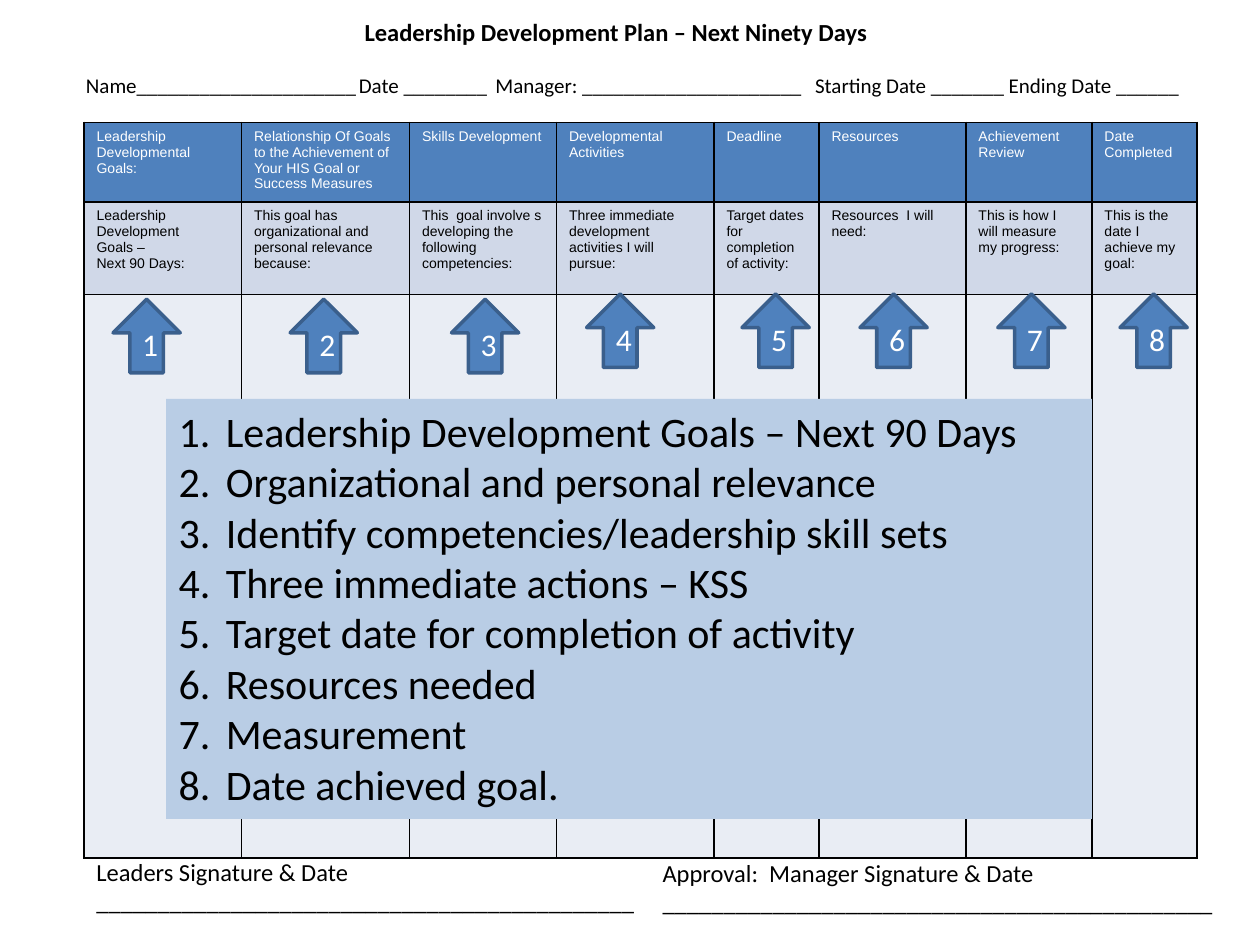
"""Build the ninety-day leadership development plan slide."""
from lxml import etree
from pptx import Presentation
from pptx.dml.color import RGBColor
from pptx.enum.shapes import MSO_SHAPE
from pptx.enum.text import MSO_ANCHOR, MSO_AUTO_SIZE, PP_ALIGN
from pptx.oxml.ns import qn
from pptx.util import Pt

RECT, UP_ARROW = MSO_SHAPE.RECTANGLE, MSO_SHAPE.UP_ARROW
TOP, MIDDLE = MSO_ANCHOR.TOP, MSO_ANCHOR.MIDDLE
CENTER, LEFT = PP_ALIGN.CENTER, PP_ALIGN.LEFT
NO_FIT, GROW = MSO_AUTO_SIZE.NONE, MSO_AUTO_SIZE.SHAPE_TO_FIT_TEXT

BLACK = RGBColor(0x00, 0x00, 0x00)
WHITE = RGBColor(0xFF, 0xFF, 0xFF)
BLUE = RGBColor(0x4F, 0x81, 0xBD)
DARK_BLUE = RGBColor(0x3A, 0x5F, 0x8C)
PANEL_BLUE = RGBColor(0xB9, 0xCD, 0xE5)
BAND_DARK = RGBColor(0xD0, 0xD8, 0xE8)
BAND_LIGHT = RGBColor(0xE9, 0xED, 0xF4)

COLUMN_WIDTHS = [90, 96, 84, 90, 60, 84, 72, 60]
ROW_HEIGHTS = [45.4, 53, 322]
HEADINGS = [
    "Leadership Developmental\nGoals:",
    "Relationship Of Goals to the Achievement of Your HIS Goal or Success Measures",
    "Skills Development",
    "Developmental Activities",
    "Deadline",
    "Resources",
    "Achievement Review",
    "Date Completed",
]
PROMPTS = [
    "Leadership Development\nGoals –\nNext 90 Days:",
    "This goal has organizational and personal relevance because:",
    "This  goal involve s developing the following competencies:",
    "Three immediate development activities I will pursue:",
    "Target dates\nfor completion of activity:",
    "Resources  I will need:",
    "This is how I will measure my progress:",
    "This is the date I achieve my goal:",
]
ROWS = [
    (HEADINGS, BLUE, WHITE),
    (PROMPTS, BAND_DARK, BLACK),
    ([""] * len(HEADINGS), BAND_LIGHT, BLACK),
]
FIELDS = [
    ("Name_____________________", 42, 171),
    ("Date ________", 198, 89),
    ("Manager: _____________________", 276, 191),
    (" Starting Date _______ Ending Date ______", 456, 227),
]
SIGNATURES = [
    ("Leaders Signature & Date\n" + "_" * 44, 48, 486),
    ("Approval:  Manager Signature & Date\n" + "_" * 45, 371.5, 486.7),
]
STEPS = [
    "Leadership Development Goals – Next 90 Days",
    "Organizational and personal relevance",
    "Identify competencies/leadership skill sets",
    "Three immediate actions – KSS",
    "Target date for completion of activity",
    "Resources needed",
    "Measurement",
    "Date achieved goal.",
]
ARROWS = [(64.6, 171), (165.8, 171), (258, 171), (335.2, 168),
          (424, 168), (491.4, 168), (570.2, 168), (640, 168)]


def write(tf, text, size, color=BLACK, name="Calibri", align=LEFT, bold=False):
    """Fill a text frame with one formatted paragraph per line."""
    tf.text = text
    for p in tf.paragraphs:
        p.alignment = align
        p.font.size = Pt(size)
        p.font.name = name
        p.font.bold = bold
        p.font.color.rgb = color


def add_title(slide, text):
    """Place and format the title placeholder."""
    title = slide.shapes.title
    title.left, title.top, title.width, title.height = Pt(200), Pt(6), Pt(304), Pt(24.2)
    tf = title.text_frame
    tf.word_wrap = False
    tf.auto_size = NO_FIT
    tf.vertical_anchor = TOP
    write(tf, text, 14, bold=True, align=CENTER)


def add_text(slide, text, left, top, width, height, size, wrap):
    """Add a plain text box."""
    tf = slide.shapes.add_textbox(Pt(left), Pt(top), Pt(width), Pt(height)).text_frame
    tf.word_wrap = wrap
    tf.auto_size = GROW
    write(tf, text, size)


def add_borders(cell):
    """Draw a thin black line on every side of a cell."""
    tc_pr = cell._tc.get_or_add_tcPr()
    for side in ("a:lnL", "a:lnR", "a:lnT", "a:lnB"):
        ln = etree.SubElement(tc_pr, qn(side), w=str(Pt(1)))
        fill = etree.SubElement(ln, qn("a:solidFill"))
        etree.SubElement(fill, qn("a:srgbClr"), val=str(BLACK))


def add_plan_table(slide):
    """Add the planning grid."""
    table = slide.shapes.add_table(
        len(ROWS), len(COLUMN_WIDTHS), Pt(48), Pt(70),
        Pt(sum(COLUMN_WIDTHS)), Pt(sum(ROW_HEIGHTS))).table
    for column, width in zip(table.columns, COLUMN_WIDTHS):
        column.width = Pt(width)
    for row, height, (texts, fill, color) in zip(table.rows, ROW_HEIGHTS, ROWS):
        row.height = Pt(height)
        for cell, text in zip(row.cells, texts):
            add_borders(cell)
            cell.fill.solid()
            cell.fill.fore_color.rgb = fill
            write(cell.text_frame, text, 8, color, "Arial")


def add_shape(slide, kind, left, top, width, height, fill):
    """Add a filled preset shape without shadow or outline."""
    sp = slide.shapes.add_shape(kind, Pt(left), Pt(top), Pt(width), Pt(height))
    sp.shadow.inherit = False
    sp.fill.solid()
    sp.fill.fore_color.rgb = fill
    sp.line.fill.background()
    return sp


def add_steps_panel(slide):
    """Add the panel with the numbered steps."""
    tf = add_shape(slide, RECT, 95, 228, 529, 240, PANEL_BLUE).text_frame
    tf.word_wrap = True
    tf.auto_size = GROW
    tf.vertical_anchor = TOP
    tf.text = "\n".join(STEPS)
    for p in tf.paragraphs:
        p_pr = p._p.get_or_add_pPr()
        p_pr.set("marL", str(Pt(27)))
        p_pr.set("indent", str(-Pt(27)))
        etree.SubElement(p_pr, qn("a:buFont"), typeface="+mj-lt")
        etree.SubElement(p_pr, qn("a:buAutoNum"), type="arabicPeriod")
        p.alignment = LEFT
        p.font.size = Pt(24)
        p.font.name = "Calibri"
        p.font.color.rgb = BLACK


def add_arrow(slide, number, left, top):
    """Add a numbered arrow pointing up at its column."""
    sp = add_shape(slide, UP_ARROW, left, top, 38.4, 42, BLUE)
    sp.line.color.rgb = DARK_BLUE
    sp.line.width = Pt(2)
    sp.text_frame.vertical_anchor = MIDDLE
    write(sp.text_frame, str(number), 18, WHITE, align=CENTER)


def main():
    """Build and save the slide."""
    prs = Presentation()
    prs.slide_width, prs.slide_height = Pt(720), Pt(540)
    slide = prs.slides.add_slide(prs.slide_layouts[5])
    add_plan_table(slide)
    add_title(slide, "Leadership Development Plan – Next Ninety Days")
    for text, left, width in FIELDS:
        add_text(slide, text, left, 38, width, 21.8, 12, False)
    for text, left, top in SIGNATURES:
        add_text(slide, text, left, top, 342, 41.2, 14, True)
    add_steps_panel(slide)
    for number, (left, top) in enumerate(ARROWS, 1):
        add_arrow(slide, number, left, top)
    prs.save("out.pptx")


if __name__ == "__main__":
    main()
